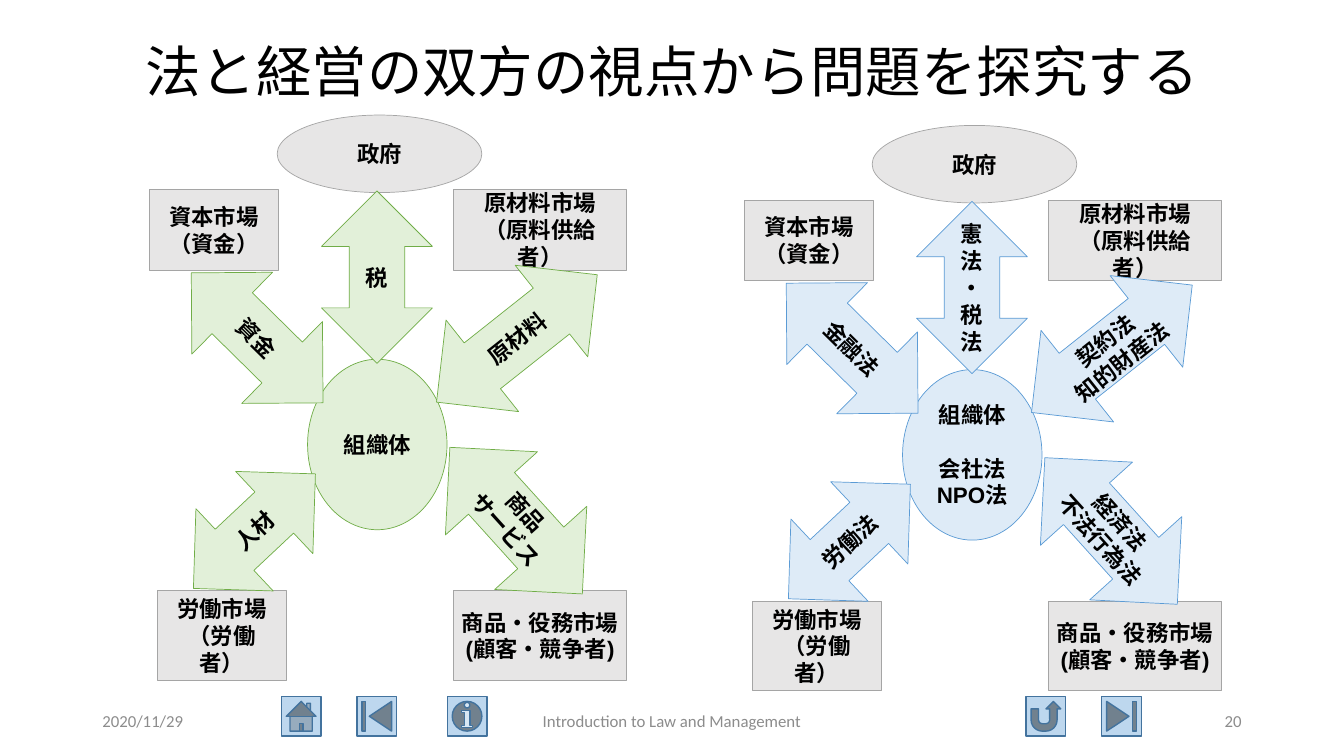
from dataclasses import dataclass

from lxml.etree import SubElement
from pptx import Presentation
from pptx.dml.color import RGBColor
from pptx.enum.shapes import MSO_SHAPE
from pptx.enum.text import MSO_ANCHOR, PP_ALIGN
from pptx.oxml.ns import qn
from pptx.util import Pt


@dataclass(frozen=True)
class Theme:
    # Each pair is (fill, line)
    grey: tuple = ("E7E6E6", "A5A5A5")
    green: tuple = ("E2F0D9", "70AD47")
    blue: tuple = ("DEEBF7", "5B9BD5")
    button: tuple = ("BDD7EE", "43739E")
    text: str = "000000"
    muted: str = "8C8C8C"
    title_size: float = 39.6
    label_size: float = 16
    footer_size: float = 12
    text_font: str = "Calibri"
    label_font: str = "Arial"


def write(tf, text, *, size, font, color, bold=False, align=PP_ALIGN.CENTER,
          anchor=MSO_ANCHOR.MIDDLE, line_spacing=None, gap=None, inset=7.2):
    """Fill a text frame; gap is the space before the second line."""
    tf.word_wrap = True
    tf.vertical_anchor = anchor
    tf.margin_left = tf.margin_right = Pt(inset)
    tf.text = text
    for i, p in enumerate(tf.paragraphs):
        p.alignment = align
        if line_spacing:
            p.line_spacing = line_spacing
        if gap and i == 1:
            p.space_before = Pt(gap)
        for r in p.runs:
            r.font.size = Pt(size)
            r.font.name = font
            r.font.bold = bold
            r.font.color.rgb = RGBColor.from_string(color)
            # East Asian characters use the same font
            SubElement(r._r.get_or_add_rPr(), qn("a:ea"), typeface=font)


class SlideBuilder:
    def __init__(self, slide, theme):
        self.s = slide
        self.theme = theme

    def textbox(self, box, text, **fmt):
        sp = self.s.shapes.add_textbox(*map(Pt, box))
        write(sp.text_frame, text, font=self.theme.text_font, **fmt)

    def shape(self, kind, box, colors, line_width=0.5):
        sp = self.s.shapes.add_shape(kind, *map(Pt, box))
        fill, line = colors
        sp.shadow.inherit = False
        sp.fill.solid()
        sp.fill.fore_color.rgb = RGBColor.from_string(fill)
        sp.line.color.rgb = RGBColor.from_string(line)
        sp.line.width = Pt(line_width)
        return sp

    def label(self, kind, box, colors, text, rotation=0, **fmt):
        t = self.theme
        sp = self.shape(kind, box, colors)
        sp.rotation = rotation
        write(sp.text_frame, text, size=t.label_size, font=t.label_font,
              color=t.text, bold=True, **fmt)

    def button(self, kind, left):
        self.shape(kind, (left, 497.5, 28.3, 28.3), self.theme.button, 1)

    def diagram(self, dx, dy, colors, organisation, arrows):
        """Draw an organisation, its surroundings and the five arrows."""
        grey = self.theme.grey

        def moved(left, top, width, height):
            return left + dx, top + dy, width, height

        # Government and organisation
        self.label(MSO_SHAPE.OVAL, moved(198, 82.2, 146.2, 55.4), grey, "政府")
        self.label(MSO_SHAPE.OVAL, moved(219.7, 256.6, 99.6, 121.8), colors,
                   organisation, gap=19)
        # Markets
        for box, text, fmt in MARKETS:
            self.label(MSO_SHAPE.RECTANGLE, moved(*box), grey, text, **fmt)
        # Arrows between them
        for (kind, box, rotation), (text, fmt) in zip(ARROWS, arrows):
            self.label(kind, moved(*box), colors, text, rotation, **fmt)


MARKETS = [
    ((106.6, 135.5, 92.5, 57.4), "資本市場\n（資金）", {}),
    ((112.3, 422, 92.5, 64), "労働市場\n（労働者）", {}),
    ((324, 135.5, 123.5, 57.4), "原材料市場\n（原料供給者）", {}),
    # Narrow insets keep each line whole
    ((324, 422, 123.5, 64), "商品・役務市場\n(顧客・競争者)", {"inset": 1}),
]

# Capital, labour, materials, goods, government
ARROWS = [
    (MSO_SHAPE.LEFT_RIGHT_ARROW, (117.6, 200.3, 132.2, 82.1), 44.6),
    (MSO_SHAPE.LEFT_RIGHT_ARROW, (122, 339.1, 119.5, 80.6), 316.8),
    (MSO_SHAPE.LEFT_RIGHT_ARROW, (296, 200, 146.5, 83.5), 321.6),
    (MSO_SHAPE.LEFT_RIGHT_ARROW, (298.1, 327.6, 141.1, 88.6), 47.9),
    (MSO_SHAPE.UP_DOWN_ARROW, (229.7, 136.4, 79.2, 123.1), 0),
]

GREEN_ARROWS = [
    ("資金", {}),
    ("人材", {}),
    ("原材料", {}),
    ("商品\nサービス", {}),
    ("税", {}),
]

BLUE_ARROWS = [
    ("金融法", {}),
    ("労働法", {}),
    ("契約法\n知的財産法", {"anchor": MSO_ANCHOR.TOP}),
    ("経済法\n不法行為法", {}),
    ("憲法\n・\n税法", {}),
]

BUTTONS = [
    (MSO_SHAPE.ACTION_BUTTON_HOME, 201),
    (MSO_SHAPE.ACTION_BUTTON_BEGINNING, 255),
    (MSO_SHAPE.ACTION_BUTTON_INFORMATION, 319.5),
    (MSO_SHAPE.ACTION_BUTTON_RETURN, 733),
    (MSO_SHAPE.ACTION_BUTTON_END, 787),
]

FOOTERS = [
    ((66, 500.5, 216, 28.8), "2020/11/29", PP_ALIGN.LEFT),
    ((318, 500.5, 324, 28.8), "Introduction to Law and Management",
     PP_ALIGN.CENTER),
    ((678, 500.5, 216, 28.8), "20", PP_ALIGN.RIGHT),
]


def main():
    prs = Presentation()
    prs.slide_width, prs.slide_height = Pt(960), Pt(540)
    theme = Theme()
    b = SlideBuilder(prs.slides.add_slide(prs.slide_layouts[6]), theme)

    # Navigation buttons
    for kind, left in BUTTONS:
        b.button(kind, left)

    # Title and footer
    b.textbox((66, 28.8, 828, 49), "法と経営の双方の視点から問題を探究する",
              size=theme.title_size, color=theme.text, line_spacing=0.9)
    for box, text, align in FOOTERS:
        b.textbox(box, text, size=theme.footer_size, color=theme.muted,
                  align=align)

    # Management view on the left, legal view on the right
    b.diagram(0, 0, theme.green, "組織体", GREEN_ARROWS)
    b.diagram(425, 7.4, theme.blue, "組織体\n会社法\nNPO法", BLUE_ARROWS)

    prs.save("out.pptx")


if __name__ == "__main__":
    main()
